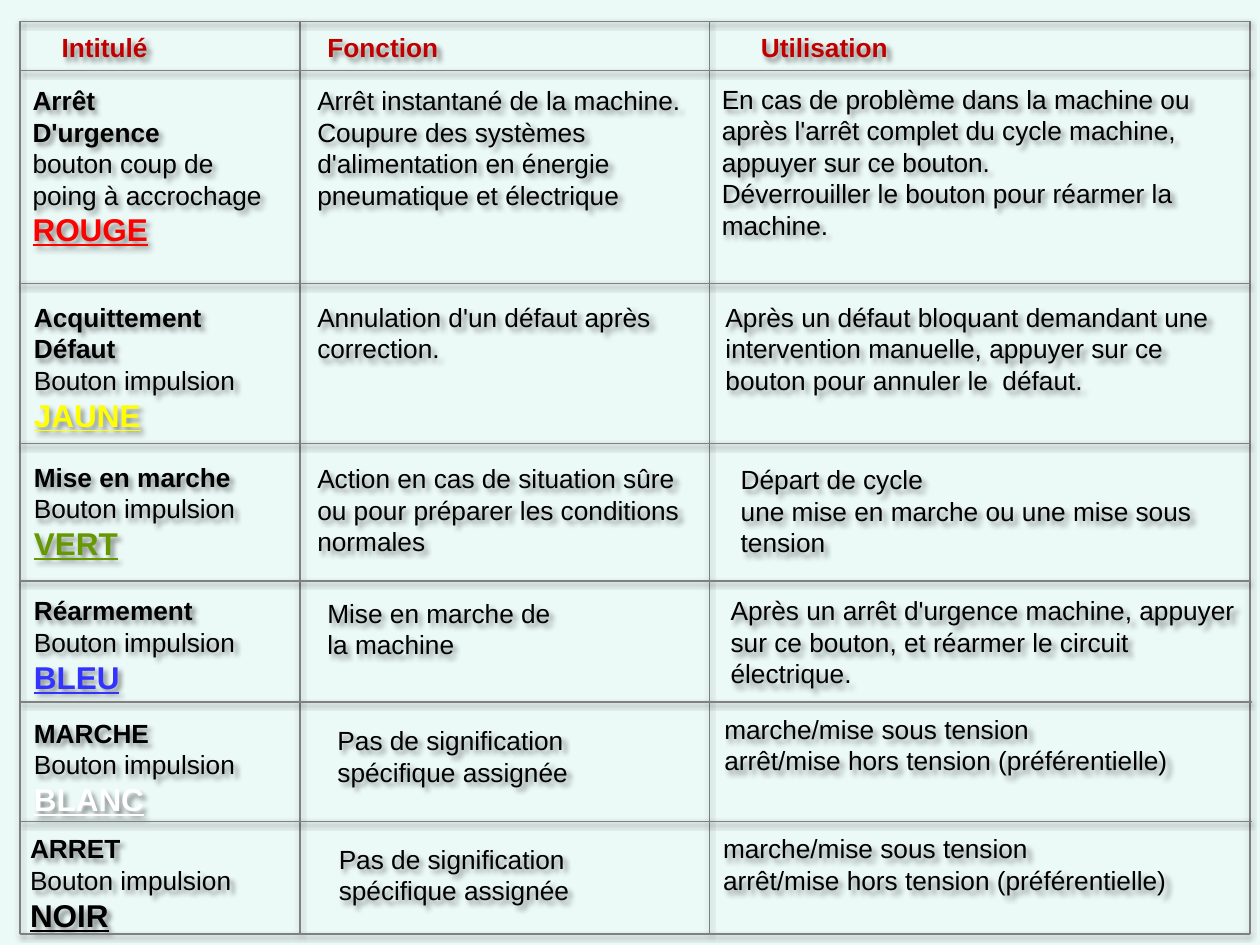
from lxml.etree import SubElement
from pptx import Presentation
from pptx.dml.color import RGBColor
from pptx.enum.shapes import MSO_CONNECTOR
from pptx.enum.text import MSO_AUTO_SIZE
from pptx.oxml.ns import qn
from pptx.util import Inches, Pt

COLORS = {"background": "ECFAF7", "header": "C00000", "text": "000000",
          "grid": "808080", "shadow": "000000",
          "ROUGE": "FF0000", "JAUNE": "FFFF00", "VERT": "669900",
          "BLEU": "3333FF", "BLANC": "FFFFFF", "NOIR": "000000"}

# (left, top, width, height), title
HEADERS = [
    ((0.39, 0.2, 0.89, 0.35), "Intitulé"),
    ((2.5, 0.2, 1.09, 0.35), "Fonction"),
    ((5.94, 0.2, 1.22, 0.35), "Utilisation"),
]

# (left, top, width, height), bold title lines, plain lines, button colour
BUTTONS = [
    ((0.16, 0.62, 2.42, 1.41), ["Arrêt", "D'urgence"],
     ["bouton coup de", "poing à accrochage"], "ROUGE"),
    ((0.17, 2.34, 2.42, 1.16), ["Acquittement", "Défaut"], ["Bouton impulsion"], "JAUNE"),
    ((0.17, 3.61, 2.42, 0.91), ["Mise en marche"], ["Bouton impulsion"], "VERT"),
    ((0.17, 4.67, 2.42, 0.91), ["Réarmement"], ["Bouton impulsion"], "BLEU"),
    ((0.17, 5.64, 2.11, 0.91), ["MARCHE"], ["Bouton impulsion"], "BLANC"),
    ((0.14, 6.56, 2.34, 0.91), ["ARRET"], ["Bouton impulsion"], "NOIR"),
]

UNASSIGNED = ["Pas de signification", "spécifique assignée"]
ON_OFF = ["marche/mise sous tension", "arrêt/mise hors tension (préférentielle)"]

# (left, top, width, height), paragraphs
FUNCTIONS = [
    ((2.42, 0.62, 3.13, 1.11),
     ["Arrêt instantané de la machine.", "Coupure des systèmes",
      "d'alimentation en énergie", "pneumatique et électrique"]),
    ((2.42, 2.34, 3.13, 0.61), ["Annulation d'un défaut après", "correction."]),
    ((2.42, 3.62, 3.13, 0.86),
     ["Action en cas de situation sûre ou pour préparer les conditions normales"]),
    ((2.5, 4.69, 2.5, 0.61), ["Mise en marche de", "la machine"]),
    ((2.58, 5.7, 2.05, 0.61), UNASSIGNED),
    ((2.59, 6.64, 2.41, 0.61), UNASSIGNED),
]
USES = [
    ((5.63, 0.61, 4.22, 1.36),
     ["En cas de problème dans la machine ou après l'arrêt complet du cycle machine, "
      "appuyer sur ce bouton.",
      "Déverrouiller le bouton pour réarmer la machine."]),
    ((5.66, 2.34, 4.1, 0.86),
     ["Après un défaut bloquant demandant une intervention manuelle, "
      "appuyer sur ce bouton pour annuler le  défaut."]),
    ((5.78, 3.63, 3.91, 0.86),
     ["Départ de cycle", "une mise en marche ou une mise sous tension"]),
    ((5.7, 4.67, 4.25, 0.86),
     ["Après un arrêt d'urgence machine, appuyer sur ce bouton, "
      "et réarmer le circuit électrique."]),
    ((5.65, 5.61, 4.06, 0.61), ON_OFF),
    ((5.64, 6.56, 4.06, 0.61), ON_OFF),
]

COLUMN_EDGES = [0.16, 2.38, 5.63, 9.92]
ROW_EDGES = [0.17, 0.56, 2.25, 3.52, 4.61, 5.57, 6.52, 7.41]
SHIFTED_ROWS = {0.56: 0.01, 5.57: 0.02, 6.52: 0.02}  # overrun past the right edge


def rgb(name):
    return RGBColor.from_string(COLORS[name])


def add_shadow(sp, blur, distance, angle, alpha):
    """Blur and distance in points, angle in degrees, alpha in percent."""
    effects = SubElement(sp._element.spPr, qn("a:effectLst"))
    shadow = SubElement(effects, qn("a:outerShdw"), blurRad=str(Pt(blur)),
                        dist=str(Pt(distance)), dir=str(angle * 60000),
                        algn="tl", rotWithShape="0")
    color = SubElement(shadow, qn("a:srgbClr"), val=COLORS["shadow"])
    SubElement(color, qn("a:alpha"), val=str(alpha * 1000))


def add_text(s, box, lines, wrap=True):
    """Each line is (text, size, colour name, bold, underline)."""
    sp = s.shapes.add_textbox(*map(Inches, box))
    add_shadow(sp, 3, 3, 45, 43)
    tf = sp.text_frame
    tf.word_wrap = wrap
    tf.auto_size = MSO_AUTO_SIZE.SHAPE_TO_FIT_TEXT
    tf.text = "\n".join(line[0] for line in lines)
    for p, (_, size, color, bold, underline) in zip(tf.paragraphs, lines):
        font = p.runs[0].font
        font.name, font.size = "Arial", Pt(size)
        font.bold, font.underline = bold, underline
        font.color.rgb = rgb(color)


def add_line(group, x1, y1, x2, y2):
    line = group.shapes.add_connector(MSO_CONNECTOR.STRAIGHT,
                                      *map(Inches, (x1, y1, x2, y2)))
    line.line.color.rgb = rgb("grid")
    line.line.width = Pt(1)
    add_shadow(line, 3.1, 1.6, 90, 38)


def styled(texts, bold=False):
    return [(text, 15, "text", bold, False) for text in texts]


def main():
    prs = Presentation()
    prs.slide_width, prs.slide_height = Inches(10), Inches(7.5)
    s = prs.slides.add_slide(prs.slide_layouts[6])
    s.background.fill.solid()
    s.background.fill.fore_color.rgb = rgb("background")

    for box, title in HEADERS:
        add_text(s, box, [(title, 15, "header", True, False)], wrap=False)
    for (box, titles, details, color), function, use in zip(BUTTONS, FUNCTIONS, USES):
        add_text(s, box, styled(titles, True) + styled(details)
                 + [(color, 18, color, True, True)])
        for cell_box, texts in (function, use):
            add_text(s, cell_box, styled(texts))

    grid = s.shapes.add_group_shape()
    left, right = COLUMN_EDGES[0], COLUMN_EDGES[-1]
    top, bottom = ROW_EDGES[0], ROW_EDGES[-1]
    for x in COLUMN_EDGES:
        add_line(grid, x, top, x, bottom)
    for y in ROW_EDGES:
        shift = SHIFTED_ROWS.get(y, 0)
        add_line(grid, left + min(shift, 0.01), y, right + shift, y)

    prs.save("out.pptx")


if __name__ == "__main__":
    main()
